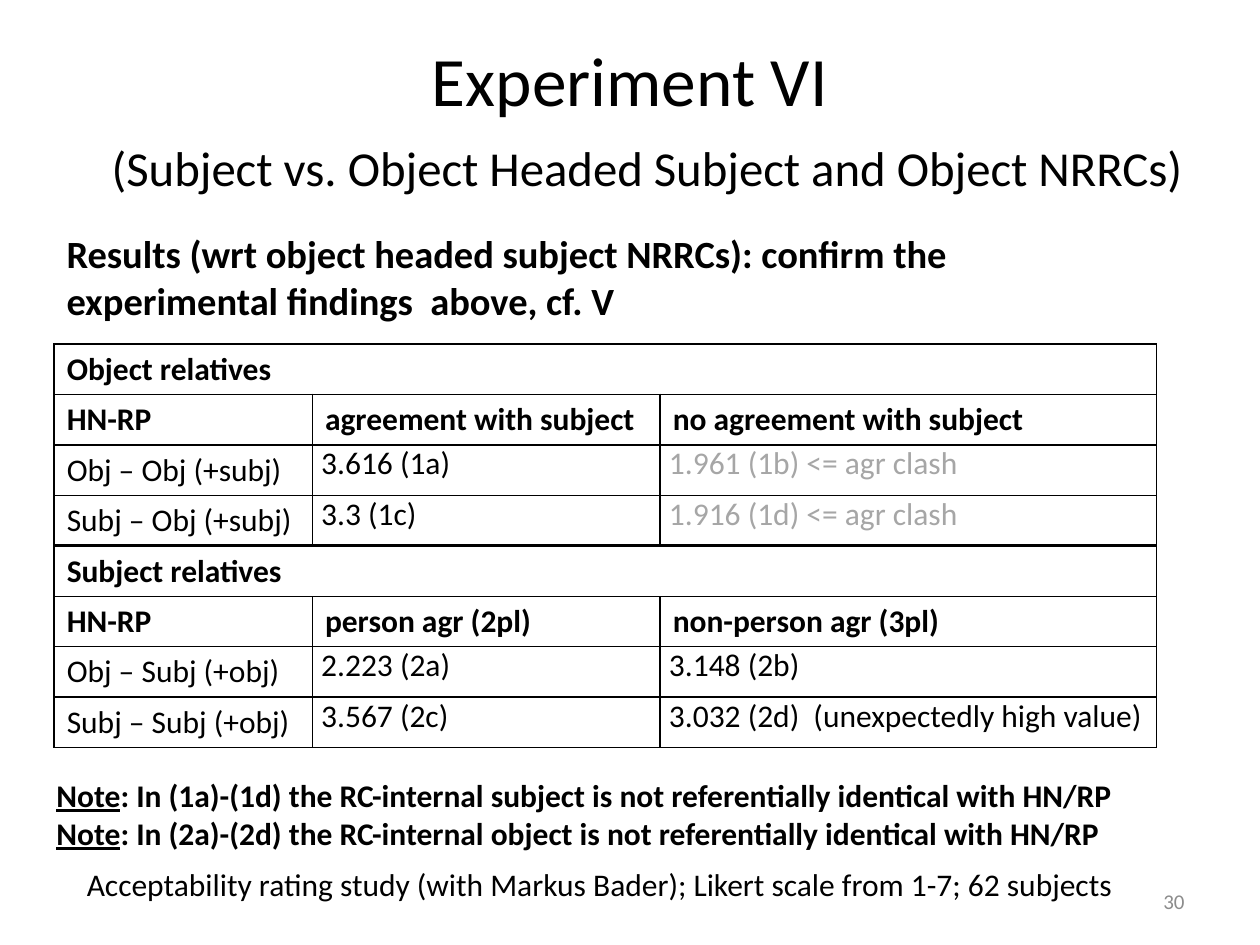
from lxml.etree import SubElement
from pptx import Presentation
from pptx.dml.color import RGBColor
from pptx.enum.text import MSO_ANCHOR as Anchor, PP_ALIGN as Align
from pptx.oxml.ns import qn
from pptx.util import Inches, Pt

THEME = {
    "font": "Calibri", "ink": "000000", "muted": "A6A6A6", "number": "8C8C8C",
    "title": 39.6, "subtitle": 27.9, "results": 22, "body": 18, "small": 12,
}

# Content
TITLE = "Experiment VI"
SUBTITLE = "(Subject vs. Object Headed Subject and Object NRRCs)"
RESULTS = ("Results (wrt object headed subject NRRCs): confirm the "
           "experimental findings  above, cf. V")
SECTIONS = [
    ("Object relatives",
     ("HN-RP", "agreement with subject", "no agreement with subject"),
     [("Obj – Obj (+subj)", "3.616 (1a)", "1.961 (1b) <= agr clash"),
      ("Subj – Obj (+subj)", "3.3 (1c)", "1.916 (1d) <= agr clash")]),
    ("Subject relatives",
     ("HN-RP", "person agr (2pl)", "non-person agr (3pl)"),
     [("Obj – Subj (+obj)", "2.223 (2a)", "3.148 (2b)"),
      ("Subj – Subj (+obj)", "3.567 (2c)",
       "3.032 (2d)  (unexpectedly high value)")]),
]
NOTES = [
    ": In (1a)-(1d) the RC-internal subject is not referentially identical with HN/RP",
    ": In (2a)-(2d) the RC-internal object is not referentially identical with HN/RP",
]
STUDY = "Acceptability rating study (with Markus Bader); Likert scale from 1-7; 62 subjects"
PAGE = "30"

# Table geometry
COLS = (2.05, 2.76, 3.94)
ROW_H = 0.4
THIN, REGULAR, THICK = 0.25, 1, 2.25


def add_run(p, text, size="body", color="ink", bold=False, underline=False):
    r = p.add_run()
    r.text = text
    f = r.font
    f.name, f.size = THEME["font"], Pt(THEME[size])
    f.color.rgb = RGBColor.from_string(THEME[color])
    f.bold, f.underline = bold, underline


def add_box(slide, x, y, w, h, anchor=Anchor.TOP):
    tf = slide.shapes.add_textbox(*map(Inches, (x, y, w, h))).text_frame
    tf.word_wrap = True
    tf.vertical_anchor = anchor
    return tf


def set_borders(cell, top, bottom):
    tc_pr = cell._tc.get_or_add_tcPr()
    sides = (("L", REGULAR), ("R", REGULAR), ("T", top), ("B", bottom))
    for i, (side, width) in enumerate(sides):
        ln = SubElement(tc_pr, qn(f"a:ln{side}"), w=str(Pt(width)))
        fill = SubElement(ln, qn("a:solidFill"))
        SubElement(fill, qn("a:srgbClr"), val=THEME["ink"])
        tc_pr.insert(i, ln)


def add_results_table(slide):
    rows = []
    for heading, labels, data in SECTIONS:
        rows += [("heading", (heading, "", "")), ("labels", labels)]
        rows += [("data", values) for values in data]
    n, per_section = len(rows), len(rows) // len(SECTIONS)
    # Rule below each row; the first and last entries frame the table
    rules = [REGULAR] * (n + 1)
    rules[per_section], rules[per_section + 1] = THICK, THIN

    table = slide.shapes.add_table(
        n, len(COLS), Inches(0.43), Inches(2.73),
        Inches(sum(COLS)), Inches(ROW_H * n)).table
    table.first_row = table.horz_banding = False
    for column, width in zip(table.columns, COLS):
        column.width = Inches(width)
    for i, (kind, values) in enumerate(rows):
        table.rows[i].height = Inches(ROW_H)
        for j, text in enumerate(values):
            cell = table.cell(i, j)
            cell.fill.background()
            set_borders(cell, rules[i], rules[i + 1])
            if kind == "data" and j:
                cell.margin_left = cell.margin_right = Inches(0.07)
                cell.margin_top = cell.margin_bottom = 0
            if text:
                color = "muted" if "agr clash" in text else "ink"
                add_run(cell.text_frame.paragraphs[0], text, color=color,
                        bold=kind != "data")
        if kind == "heading":
            table.cell(i, 0).merge(table.cell(i, len(COLS) - 1))


def main():
    prs = Presentation()
    prs.slide_width, prs.slide_height = Inches(10), Inches(7.5)
    s = prs.slides.add_slide(prs.slide_layouts[6])

    # Title and subtitle, the latter set slightly to the right
    tf = add_box(s, 0.5, 0.3, 9, 1.25, Anchor.MIDDLE)
    tf.margin_left = tf.margin_right = 0
    p = tf.paragraphs[0]
    p.alignment = Align.CENTER
    add_run(p, TITLE, "title")
    p = tf.add_paragraph()
    p.alignment = Align.CENTER
    p.space_before = Pt(10)
    p._p.get_or_add_pPr().set("marL", str(Inches(0.27)))
    add_run(p, SUBTITLE, "subtitle")

    # Page number
    p = add_box(s, 7.17, 6.95, 2.33, 0.4, Anchor.MIDDLE).paragraphs[0]
    p.alignment = Align.RIGHT
    add_run(p, PAGE, "small", "number")

    # Study details, table and finding
    add_run(add_box(s, 0.59, 6.82, 8.58, 0.4).paragraphs[0], STUDY)
    add_results_table(s)
    add_run(add_box(s, 0.43, 1.78, 8.66, 0.84).paragraphs[0],
            RESULTS, "results", bold=True)

    # Notes
    tf = add_box(s, 0.35, 6.11, 8.9, 0.71)
    for i, note in enumerate(NOTES):
        p = tf.add_paragraph() if i else tf.paragraphs[0]
        add_run(p, "Note", bold=True, underline=True)
        add_run(p, note, bold=True)

    prs.save("out.pptx")


if __name__ == "__main__":
    main()
